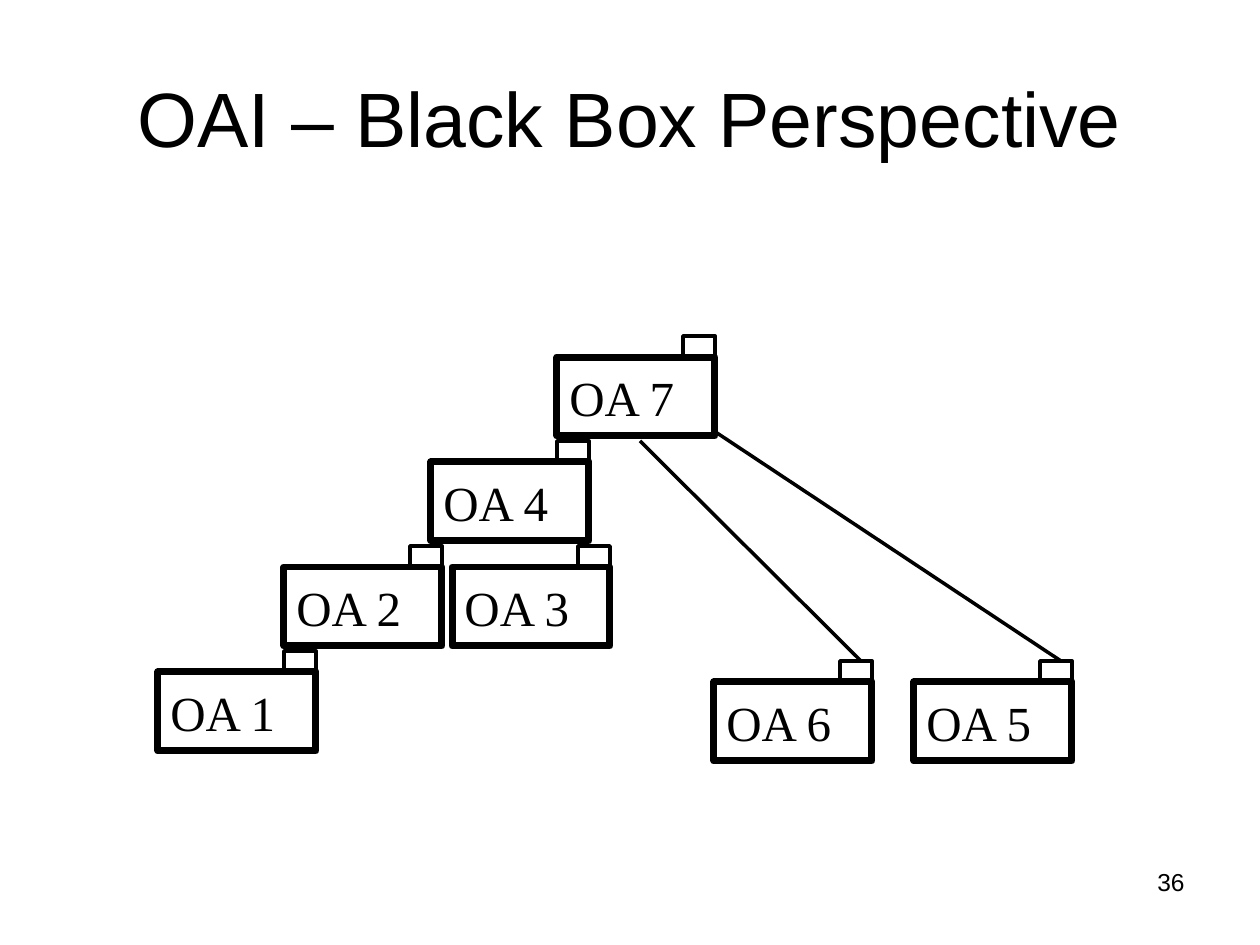
from pptx import Presentation, util as u
from pptx.dml.color import RGBColor
from pptx.enum import shapes, text
from pptx.oxml.ns import qn
from lxml import etree

PX = 914400 // 126
BLACK = "000000"
TITLE = "OAI – Black Box Perspective"
PAGE = "36"
BOX_W, BOX_H = 158, 79
TAB_W, TAB_H = 32, 21
ARCHIVES = [
    ("OA 1", 158, 672),
    ("OA 2", 284, 567),
    ("OA 4", 431, 462),
    ("OA 3", 452, 567),
    ("OA 5", 914, 682),
    ("OA 6", 714, 682),
    ("OA 7", 557, 357),
]
LINKS = [(640, 441, 861, 661), (714, 431, 1061, 661)]


def px(*values):
    return [u.Emu(v * PX) for v in values]


def color(value):
    return RGBColor.from_string(value)


def write(sp, words, font, size, align, anchor):
    tf = sp.text_frame
    tf.word_wrap = True
    tf.vertical_anchor = anchor
    p = tf.paragraphs[0]
    p.alignment = align
    r = p.add_run()
    r.text = words
    for name, value in {"name": font, "size": u.Pt(size)}.items():
        setattr(r.font, name, value)
    r.font.color.rgb = color(BLACK)


def outline(sp, width):
    sp.line.color.rgb = color(BLACK)
    sp.line.width = u.Pt(width)


def rectangle(parent, at, width):
    sp = parent.shapes.add_shape(shapes.MSO_SHAPE.RECTANGLE, *px(*at))
    sp.shadow.inherit = False
    sp.fill.background()
    outline(sp, width)
    return sp


def archive(s, name, x, y):
    group = s.shapes.add_group_shape()
    group.name = name
    box = rectangle(group, (x, y, BOX_W, BOX_H), 4)
    write(box, name, "Times New Roman", 28, text.PP_ALIGN.LEFT, text.MSO_ANCHOR.MIDDLE)
    rectangle(group, (x + BOX_W - TAB_W, y - TAB_H, TAB_W, TAB_H), 2)


def link(s, ends):
    line = s.shapes.add_connector(shapes.MSO_CONNECTOR.STRAIGHT, *px(*ends))
    outline(line, 2)
    etree.SubElement(line._element.spPr, qn("a:effectLst"))


def main():
    prs = Presentation()
    prs.slide_width, prs.slide_height = px(1260, 945)
    s = prs.slides.add_slide(prs.slide_layouts[5])

    title = s.shapes.title
    title.left, title.top, title.width, title.height = px(63, 38, 1134, 157)
    write(title, TITLE, "Arial", 44, text.PP_ALIGN.CENTER, text.MSO_ANCHOR.MIDDLE)

    number = s.shapes.add_textbox(*px(903, 861, 294, 66))
    write(number, PAGE, "Arial", 14, text.PP_ALIGN.RIGHT, text.MSO_ANCHOR.TOP)

    for item in ARCHIVES:
        archive(s, *item)
    for ends in LINKS:
        link(s, ends)
    prs.save("out.pptx")


if __name__ == "__main__":
    main()
